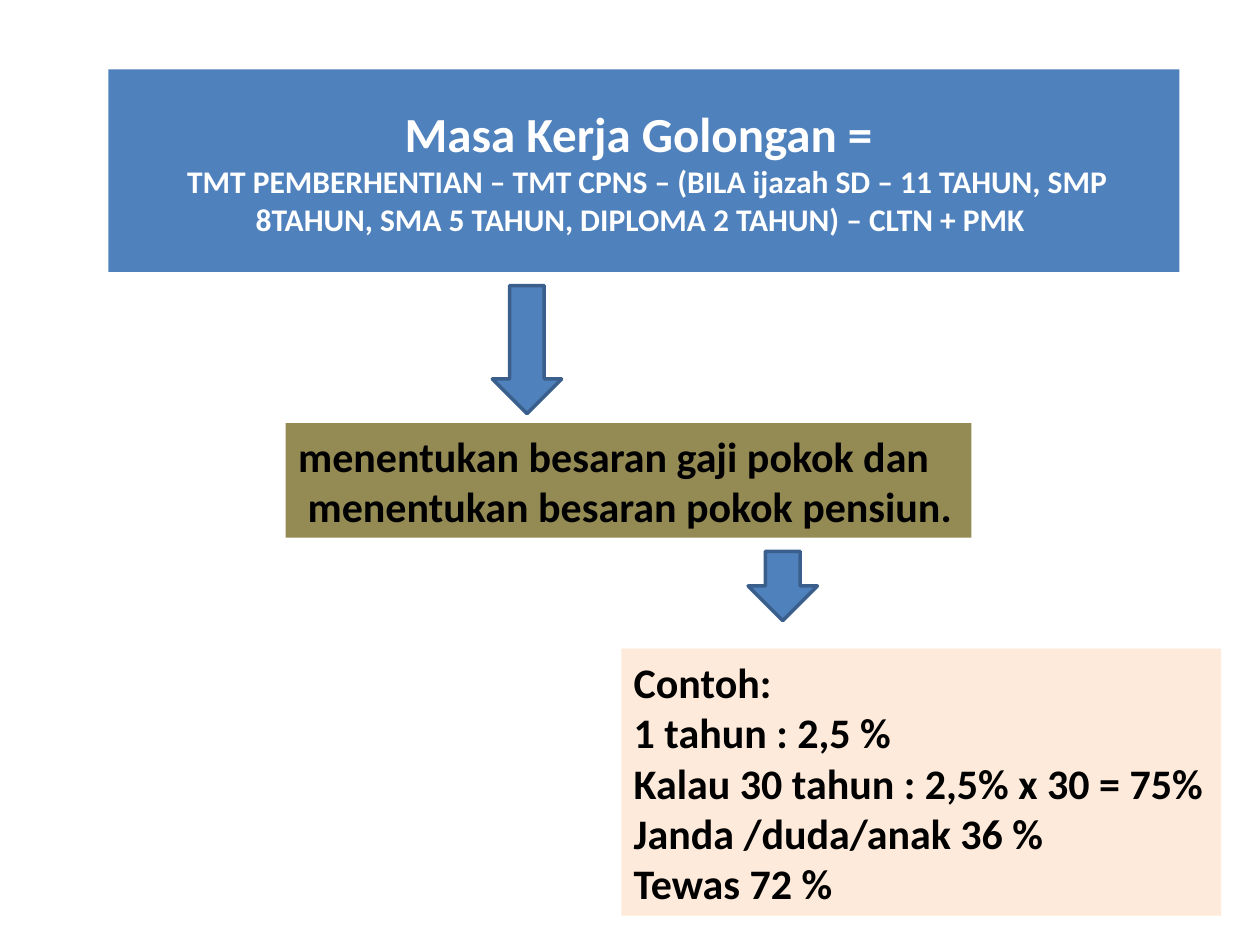
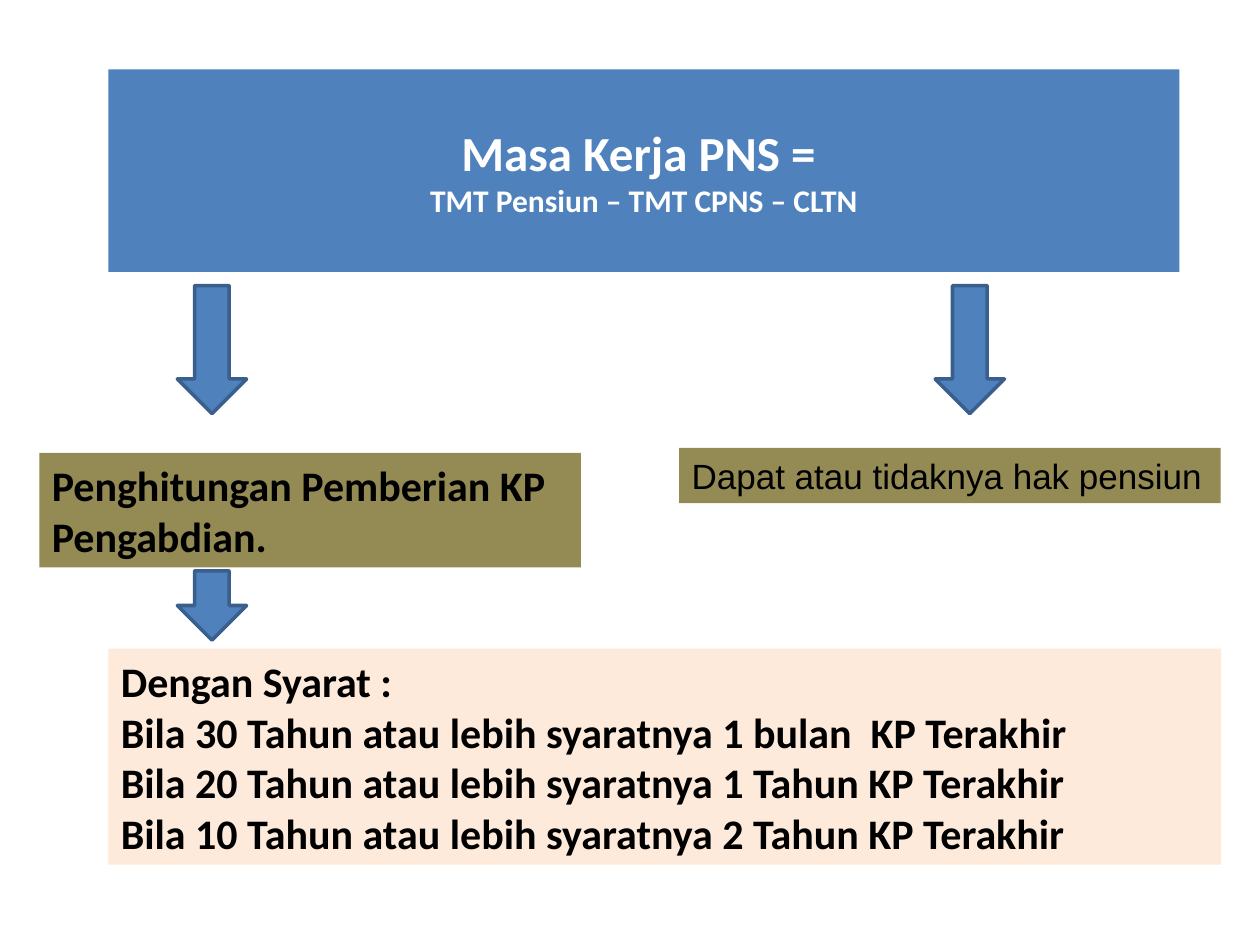
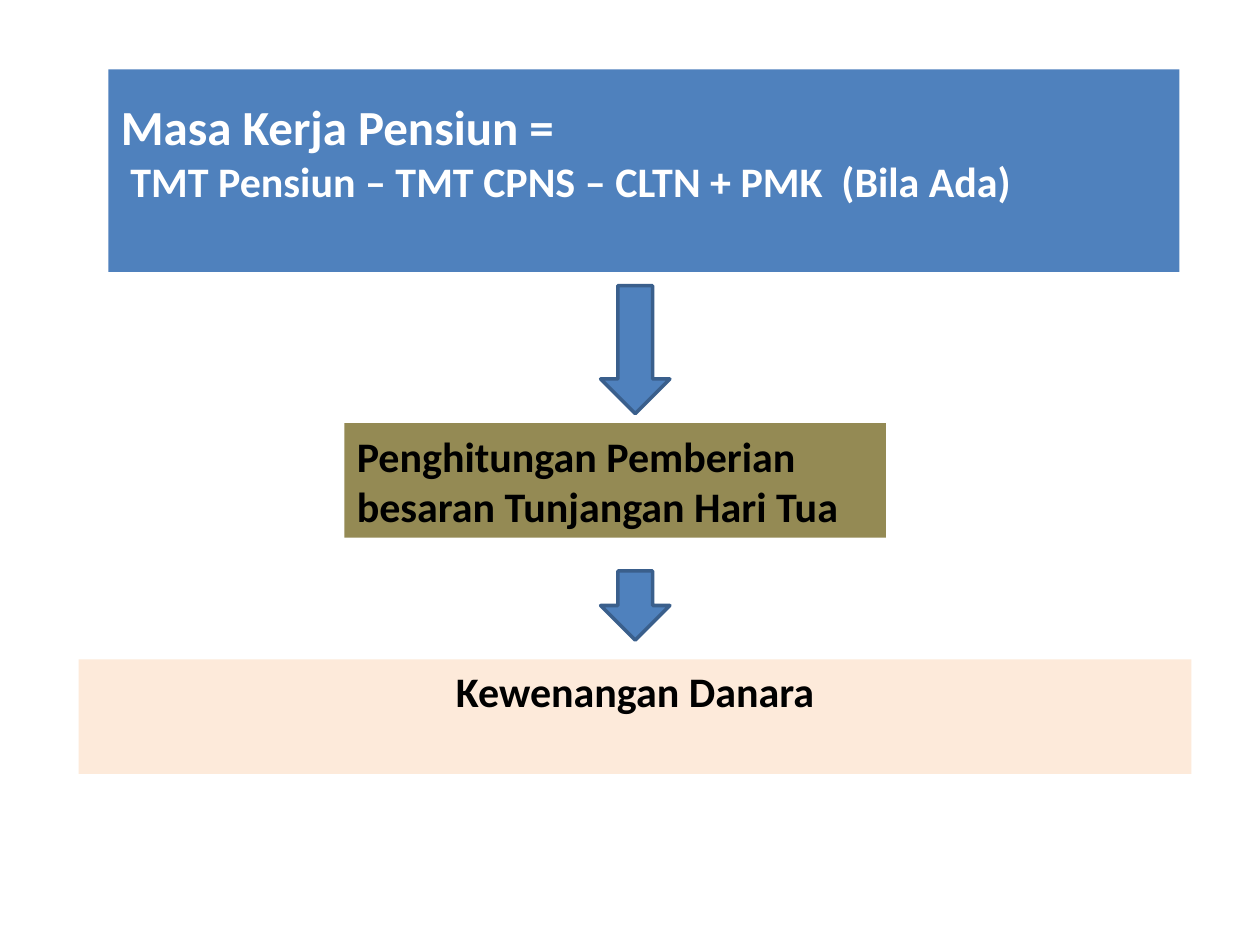
import pptx
import pptx.util
import pptx.dml.color
import pptx.enum.shapes
import pptx.enum.text

Pt = pptx.util.Pt
ALIGN = pptx.enum.text.PP_ALIGN
ANCHOR = pptx.enum.text.MSO_ANCHOR
SHAPE = pptx.enum.shapes.MSO_SHAPE

COLORS = {
    "banner": "4F81BD",
    "arrow_line": "3A5F8C",
    "purpose": "948A54",
    "detail": "FDEADA",
    "light": "FFFFFF",
    "dark": "000000",
}

BANNER = (62, 39.6, 612, 115.8)
ARROW_WIDTH = 39.6
LONG_ARROW, SHORT_ARROW = 73.2, 39.6
FIRST_ARROW_TOP = 163.2
LINE_HEIGHT = 29.1
INSET = 3.6

SLIDES = [
    {
        "banner": [
            ("Masa Kerja Golongan = ", 28),
            (" TMT PEMBERHENTIAN – TMT CPNS – (BILA ijazah SD – 11 TAHUN, "
             "SMP 8TAHUN, SMA 5 TAHUN, DIPLOMA 2 TAHUN) – CLTN + PMK ", 18),
        ],
        "boxes": [
            {"kind": "purpose", "left": 163.3, "top": 241.8, "width": 391.8, "rows": 2,
             "lines": ["menentukan besaran gaji pokok dan",
                       " menentukan besaran pokok pensiun."]},
            {"kind": "detail", "left": 355, "top": 370.6, "width": 342.8, "rows": 5,
             "lines": ["Contoh:", "1 tahun : 2,5 %",
                       "Kalau 30 tahun : 2,5% x 30 = 75%",
                       "Janda /duda/anak 36 %", "Tewas 72 %"]},
        ],
        "arrows": [(281.3, FIRST_ARROW_TOP, LONG_ARROW), (427.5, 315, SHORT_ARROW)],
    },
    {
        "banner": [("Masa Kerja PNS = ", 28), (" TMT Pensiun – TMT CPNS – CLTN ", 18)],
        "boxes": [
            {"kind": "purpose", "left": 22.5, "top": 258.8, "width": 309.4, "rows": 2,
             "lines": ["Penghitungan Pemberian KP Pengabdian."]},
            {"kind": "detail", "left": 62, "top": 370.6, "width": 635.8, "rows": 4,
             "lines": ["Dengan Syarat :",
                       "Bila 30 Tahun atau lebih syaratnya 1 bulan  KP Terakhir",
                       "Bila 20 Tahun atau lebih syaratnya 1 Tahun KP Terakhir",
                       "Bila 10 Tahun atau lebih syaratnya 2 Tahun KP Terakhir"]},
            {"kind": "purpose", "left": 388.1, "top": 256, "width": 309.4, "height": 31.5,
             "lines": ["Dapat atau tidaknya hak pensiun"],
             "format": {"size": 20, "font": "Arial", "bold": False}},
        ],
        "arrows": [(101.3, FIRST_ARROW_TOP, LONG_ARROW), (101.3, 326.2, SHORT_ARROW),
                   (534.4, FIRST_ARROW_TOP, LONG_ARROW)],
    },
    {
        "banner": [("Masa Kerja Pensiun =", 28),
                   (" TMT Pensiun – TMT CPNS – CLTN + PMK  (Bila Ada)", 24)],
        "banner_format": {"align": ALIGN.LEFT, "bottom": 25.6},
        "boxes": [
            {"kind": "purpose", "left": 196.8, "top": 241.8, "width": 309.4, "rows": 2,
             "lines": ["Penghitungan Pemberian besaran Tunjangan Hari Tua"]},
            {"kind": "detail", "left": 45, "top": 376.8, "width": 635.8, "rows": 2,
             "lines": ["Kewenangan Danara"],
             "format": {"align": ALIGN.CENTER, "anchor": ANCHOR.TOP}},
        ],
        "arrows": [(343.2, FIRST_ARROW_TOP, LONG_ARROW), (343.2, 326.2, SHORT_ARROW)],
    },
]


def rgb(name):
    return pptx.dml.color.RGBColor.from_string(COLORS[name])


def add_filled(slide, preset, place, fill, line=None):
    shape = slide.shapes.add_shape(preset, *[Pt(value) for value in place])
    shape.shadow.inherit = False
    shape.fill.solid()
    shape.fill.fore_color.rgb = rgb(fill)
    if line:
        shape.line.color.rgb = rgb(line)
        shape.line.width = Pt(2)
    else:
        shape.line.fill.background()
    return shape


def write_text(shape, lines, size=24, font="Calibri", bold=True, color="dark",
               align=ALIGN.LEFT, anchor=ANCHOR.MIDDLE, bottom=INSET):
    frame = shape.text_frame
    frame.word_wrap = True
    frame.vertical_anchor = anchor
    frame.margin_bottom = Pt(bottom)
    for index, line in enumerate(lines):
        text, line_size = line if isinstance(line, tuple) else (line, size)
        paragraph = frame.add_paragraph() if index else frame.paragraphs[0]
        paragraph.alignment = align
        run = paragraph.add_run()
        run.text = text
        run.font.size = Pt(line_size)
        run.font.name = font
        run.font.bold = bold
        run.font.color.rgb = rgb(color)


def build_slide(presentation, content):
    slide = presentation.slides.add_slide(presentation.slide_layouts[6])
    banner = add_filled(slide, SHAPE.RECTANGLE, BANNER, "banner")
    banner_format = {"color": "light", "align": ALIGN.CENTER, **content.get("banner_format", {})}
    write_text(banner, content["banner"], **banner_format)
    for box in content["boxes"]:
        height = box.get("height") or 2 * INSET + box["rows"] * LINE_HEIGHT
        place = (box["left"], box["top"], box["width"], height)
        shape = add_filled(slide, SHAPE.RECTANGLE, place, box["kind"])
        write_text(shape, box["lines"], **box.get("format", {}))
    for left, top, height in content["arrows"]:
        add_filled(slide, SHAPE.DOWN_ARROW, (left, top, ARROW_WIDTH, height),
                   "banner", line="arrow_line")


def main():
    presentation = pptx.Presentation()
    presentation.slide_width = Pt(720)
    presentation.slide_height = Pt(540)
    for content in SLIDES:
        build_slide(presentation, content)
    presentation.save("out.pptx")


if __name__ == "__main__":
    main()
